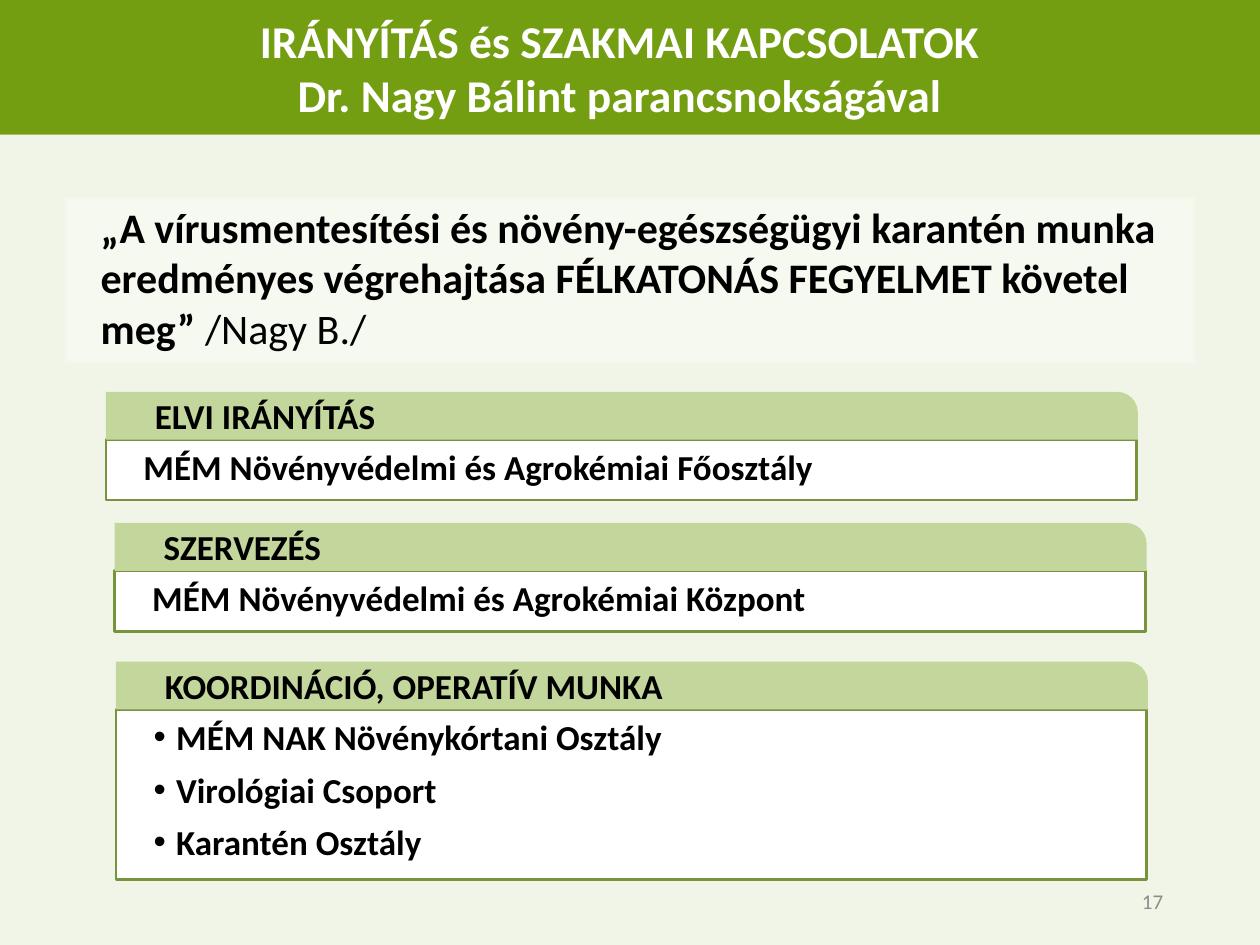
from lxml import etree
from pptx import Presentation
from pptx.dml.color import RGBColor
from pptx.enum import shapes, text
from pptx.oxml import parse_xml
from pptx.oxml.ns import nsdecls, qn
from pptx.util import Inches, Pt

WHITE = RGBColor(0xFF, 0xFF, 0xFF)
BLACK = RGBColor(0, 0, 0)
GREY = RGBColor(0x8C, 0x8C, 0x8C)
PALE = RGBColor(0xEB, 0xF1, 0xDE)
TITLE_GREEN = RGBColor(0x73, 0x9E, 0x12)
HEAD_GREEN = RGBColor(0xC3, 0xD6, 0x9B)
LINE_GREEN = RGBColor(0x77, 0x93, 0x3C)

TITLE = ["IRÁNYÍTÁS és SZAKMAI KAPCSOLATOK", "Dr. Nagy Bálint parancsnokságával"]
QUOTE = ("„A vírusmentesítési és növény-egészségügyi karantén munka eredményes "
         "végrehajtása FÉLKATONÁS FEGYELMET követel meg” ")
SOURCE = "/Nagy B./"
PAGE = "17"
# heading, left, top, height of the content box, content lines
PANELS = [
    ("ELVI IRÁNYÍTÁS", 0.84, 3.11, 0.48,
     ["MÉM Növényvédelmi és Agrokémiai Főosztály"]),
    ("SZERVEZÉS", 0.91, 4.15, 0.48,
     ["MÉM Növényvédelmi és Agrokémiai Központ"]),
    ("KOORDINÁCIÓ, OPERATÍV MUNKA", 0.92, 5.25, 1.35,
     ["MÉM NAK Növénykórtani Osztály", "Virológiai Csoport", "Karantén Osztály"]),
]
PANEL_W, HEAD_H = 8.18, 0.38


def add_box(s, kind, left, top, width, height, fill, line=None):
    sp = s.shapes.add_shape(kind, Inches(left), Inches(top), Inches(width), Inches(height))
    sp.shadow.inherit = False
    sp.fill.solid()
    sp.fill.fore_color.rgb = fill
    if line is None:
        sp.line.fill.background()
    else:
        sp.line.color.rgb = line
        sp.line.width = Pt(1.5)
    return sp


def set_alpha(sp, percent):
    color = sp.fill._xPr.find(qn("a:solidFill"))[0]
    etree.SubElement(color, qn("a:alpha"), val=str(percent * 1000))


def set_soft_white(sp):
    """Translucent white that fades out at the edges."""
    sp.fill.background()
    stops = "".join(
        f'<a:gs pos="{pos}000"><a:srgbClr val="FFFFFF"><a:alpha val="{alpha}000"/>'
        '</a:srgbClr></a:gs>' for pos, alpha in ((95, 40), (100, 0)))
    grad = parse_xml(
        f'<a:gradFill {nsdecls("a")} rotWithShape="1"><a:gsLst>{stops}</a:gsLst>'
        '<a:path path="rect"><a:fillToRect l="50000" t="50000" r="50000" b="50000"/>'
        '</a:path></a:gradFill>')
    old = sp.fill._xPr.find(qn("a:noFill"))
    old.getparent().replace(old, grad)


def write(sp, paragraphs, size=20, color=BLACK, bold=True, align=text.PP_ALIGN.LEFT,
          anchor=text.MSO_ANCHOR.TOP, margin=0, hanging=0, gap=0, bullet=False):
    """Write paragraphs; each is a string or a list of (text, bold) runs."""
    tf = sp.text_frame
    tf.word_wrap = True
    tf.vertical_anchor = anchor
    for i, runs in enumerate(paragraphs):
        p = tf.paragraphs[0] if i == 0 else tf.add_paragraph()
        pPr = p._p.get_or_add_pPr()
        pPr.set("marL", str(Inches(margin)))
        pPr.set("indent", str(Inches(hanging)))
        if bullet:
            etree.SubElement(pPr, qn("a:buFont"), typeface="Arial")
            etree.SubElement(pPr, qn("a:buChar"), char="•")
        p.alignment = align
        if i and gap:
            p.space_before = Pt(gap)
        for words, is_bold in [(runs, bold)] if isinstance(runs, str) else runs:
            r = p.add_run()
            r.text = words
            r.font.name = "Calibri"
            r.font.size = Pt(size)
            r.font.bold = is_bold
            r.font.color.rgb = color


def add_panel(s, heading, left, top, height, lines):
    body = add_box(s, shapes.MSO_SHAPE.RECTANGLE, left, top + HEAD_H, PANEL_W, height,
                   WHITE, LINE_GREEN)
    if len(lines) > 1:
        write(body, lines, margin=0.38, hanging=-0.18, gap=6, bullet=True)
    else:
        write(body, lines, margin=0.2)
    head = add_box(s, shapes.MSO_SHAPE.ROUND_1_RECTANGLE, left, top, PANEL_W + 0.01,
                   HEAD_H, HEAD_GREEN)
    head.adjustments[0] = 0.43
    write(head, [heading], anchor=text.MSO_ANCHOR.MIDDLE, margin=0.29)


def main():
    prs = Presentation()
    prs.slide_width, prs.slide_height = Inches(10), Inches(7.5)
    s = prs.slides.add_slide(prs.slide_layouts[6])
    rect = shapes.MSO_SHAPE.RECTANGLE

    backdrop = add_box(s, rect, 0, 1.07, 10, 6.43, PALE)
    set_alpha(backdrop, 70)

    title = add_box(s, rect, 0, 0, 10, 1.07, TITLE_GREEN)
    write(title, TITLE, size=26, color=WHITE, align=text.PP_ALIGN.CENTER,
          anchor=text.MSO_ANCHOR.MIDDLE)
    # The first title line sits slightly left of centre
    title.text_frame.paragraphs[0]._p.pPr.set("marR", str(Inches(0.16)))

    quote = add_box(s, rect, 0.5, 1.55, 8.99, 1.34, WHITE)
    set_soft_white(quote)
    write(quote, [[(QUOTE, True), (SOURCE, False)]], size=24, margin=0.2)

    number = s.shapes.add_textbox(Inches(7.17), Inches(6.95), Inches(2.16), Inches(0.4))
    write(number, [PAGE], size=12, color=GREY, bold=False, align=text.PP_ALIGN.RIGHT,
          anchor=text.MSO_ANCHOR.MIDDLE)

    for panel in PANELS:
        add_panel(s, *panel)
    prs.save("out.pptx")


if __name__ == "__main__":
    main()
